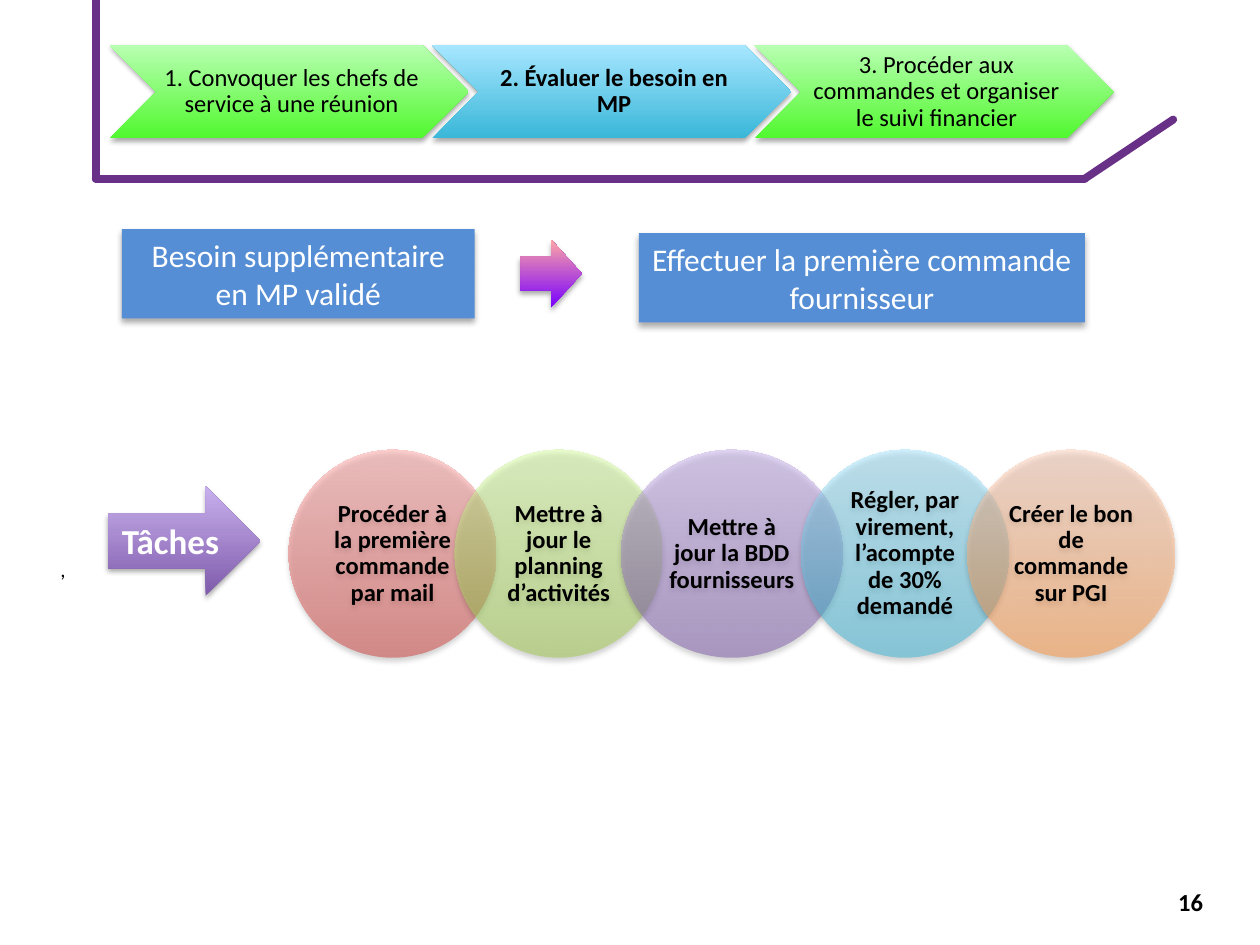
from lxml import etree
from pptx import Presentation
from pptx.dml.color import RGBColor
from pptx.enum.shapes import MSO_CONNECTOR, MSO_SHAPE
from pptx.enum.text import MSO_ANCHOR, PP_ALIGN
from pptx.oxml.ns import qn
from pptx.util import Cm, Pt

STRAIGHT = MSO_CONNECTOR.STRAIGHT
CHEVRON = MSO_SHAPE.CHEVRON
CIRCLE = MSO_SHAPE.OVAL
RECTANGLE = MSO_SHAPE.RECTANGLE
ARROW = MSO_SHAPE.RIGHT_ARROW
MIDDLE = MSO_ANCHOR.MIDDLE
CENTER = PP_ALIGN.CENTER
LEFT = PP_ALIGN.LEFT

FONT = "Calibri"
COLORS = {
    "frame": "683086",
    "box": "558ED5",
    "black": "000000",
    "white": "FFFFFF",
}
GRADIENTS = {
    "red": ("D1403C", "FFA6A5"),
    "olive": ("A0CA4A", "DAFFA5"),
    "purple": ("7F5BAB", "C8B0ED"),
    "blue": ("39B7D8", "A7E6FF"),
    "orange": ("FF953E", "FFD2BD"),
    "green": ("51F82F", "B9FFB2"),
    "violet": ("7800FF", "FFA6A5"),
}
STEPS = [
    ("1. Convoquer les chefs de service à une réunion", "green", False),
    ("2. Évaluer le besoin en MP", "blue", True),
    ("3. Procéder aux commandes et organiser le suivi financier", "green", False),
]
TASKS = [
    ("Procéder à la première commande par mail", "red", 4.19),
    ("Mettre à jour le planning d’activités", "olive", 4.19),
    ("Mettre à jour la BDD fournisseurs", "purple", 4.47),
    ("Régler, par virement, l’acompte de 30% demandé", "blue", 4.19),
    ("Créer le bon de commande sur PGI", "orange", 4.19),
]


def rgb(name):
    return RGBColor.from_string(COLORS[name])


def write(box, text, size, color="black", bold=False, align=CENTER, spacing=1.0):
    frame = box.text_frame
    frame.word_wrap = True
    frame.text = text
    para = frame.paragraphs[0]
    para.alignment = align
    para.line_spacing = spacing
    for span in para.runs:
        span.font.name = FONT
        span.font.size = Pt(size)
        span.font.bold = bold
        span.font.color.rgb = rgb(color)


def set_insets(box, left, top, right, bottom):
    frame = box.text_frame
    frame.margin_left, frame.margin_right = Cm(left), Cm(right)
    frame.margin_top, frame.margin_bottom = Cm(top), Cm(bottom)


def add_shadow(shape, blur, distance, opacity):
    shape.shadow.inherit = False
    effects = shape._element.spPr.find(qn("a:effectLst"))
    shadow = etree.SubElement(effects, qn("a:outerShdw"), blurRad=str(Pt(blur)),
                              dist=str(Pt(distance)), dir="5400000", rotWithShape="0")
    color = etree.SubElement(shadow, qn("a:srgbClr"), val=COLORS["black"])
    etree.SubElement(color, qn("a:alpha"), val=str(opacity * 1000))


def fill_gradient(shape, name, opacity=100):
    shape.fill.gradient()
    shape.fill.gradient_angle = 90
    for stop, color in zip(shape.fill.gradient_stops, GRADIENTS[name]):
        stop.color.rgb = RGBColor.from_string(color)
    if opacity < 100:
        for color in shape._element.spPr.find(qn("a:gradFill")).iter(qn("a:srgbClr")):
            etree.SubElement(color, qn("a:alpha"), val=str(opacity * 1000))


def add_figure(page, kind, left, top, width, height):
    shape = page.shapes.add_shape(kind, Cm(left), Cm(top), Cm(width), Cm(height))
    shape.line.fill.background()
    shape.text_frame.vertical_anchor = MIDDLE
    return shape


def add_gradient_figure(page, kind, place, gradient, opacity=100):
    shape = add_figure(page, kind, *place)
    fill_gradient(shape, gradient, opacity)
    add_shadow(shape, 3.1, 1.8, 35)
    return shape


def add_label(page, text, size, bold, left, top, width, height):
    box = page.shapes.add_textbox(Cm(left), Cm(top), Cm(width), Cm(height))
    write(box, text, size, bold=bold, align=LEFT)


def add_frame(page):
    corners = [(1.93, 0), (1.93, 3.6), (21.87, 3.6), (23.65, 2.41)]
    for start, end in zip(corners, corners[1:]):
        line = page.shapes.add_connector(STRAIGHT, *map(Cm, start + end))
        line.line.color.rgb = rgb("frame")
        line.line.width = Pt(4.5)
        line.line._get_or_add_ln().set("cap", "rnd")
        etree.SubElement(line._element.spPr, qn("a:effectLst"))


def add_steps(page):
    for index, (text, gradient, bold) in enumerate(STEPS):
        place = (2.21 + index * 6.5, 0.91, 7.24, 1.88)
        step = add_gradient_figure(page, CHEVRON, place, gradient)
        set_insets(step, 0.15, 0.05, 0.05, 0.05)
        write(step, text, 14, bold=bold, spacing=0.9)


def add_tasks(page):
    left, overlap = 5.82, 0.84
    for text, gradient, width in TASKS:
        task = add_gradient_figure(page, CIRCLE, (left, 9.07, width, 4.19), gradient, 50)
        set_insets(task, 0.23, 0.05, 0.23, 0.05)
        write(task, text, 14, bold=True, spacing=0.9)
        left += width - overlap


def add_box(page, text, *place):
    box = add_figure(page, RECTANGLE, *place)
    box.fill.solid()
    box.fill.fore_color.rgb = rgb("box")
    add_shadow(box, 3.5, 2.2, 32)
    write(box, text, 18, "white")


def main():
    deck = Presentation()
    deck.slide_width, deck.slide_height = Cm(25.4), Cm(19.05)
    page = deck.slides.add_slide(deck.slide_layouts[6])

    add_frame(page)
    add_label(page, "16", 14, True, 23.5, 17.75, 1.7, 1.02)
    add_label(page, ",", 12, False, 0.97, 11.1, 22.5, 0.76)
    add_tasks(page)
    add_box(page, "Besoin supplémentaire en MP validé", 2.46, 4.62, 7.11, 1.8)
    add_box(page, "Effectuer la première commande fournisseur", 12.88, 4.7, 8.99, 1.8)
    tasks_arrow = add_gradient_figure(page, ARROW, (2.18, 9.8, 3.07, 2.21), "purple")
    write(tasks_arrow, "Tâches", 20, "white", bold=True)
    add_gradient_figure(page, ARROW, (10.49, 4.83, 1.24, 1.37), "violet")
    add_steps(page)

    deck.save("out.pptx")


if __name__ == "__main__":
    main()
